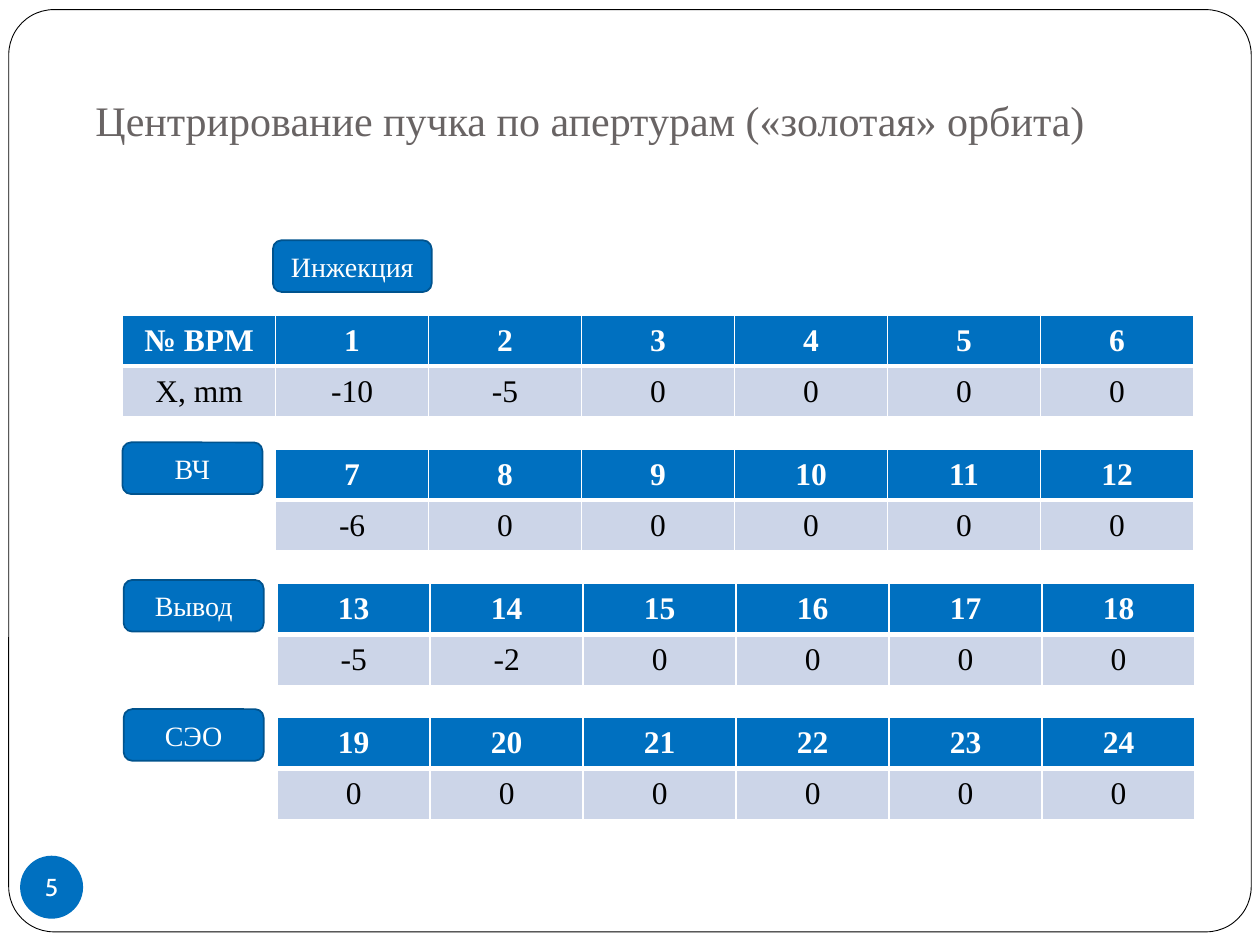
from lxml import etree
from pptx import Presentation
from pptx.dml.color import RGBColor
from pptx.enum.shapes import MSO_SHAPE as SHAPE
from pptx.enum.text import MSO_ANCHOR as ANCHOR, PP_ALIGN as ALIGN
from pptx.oxml.ns import qn
from pptx.util import Pt


def rgb(value):
    return RGBColor.from_string(value)


class SlideBuilder:
    SERIF, SANS = "Times New Roman", "Cabin"
    BLUE, DARK_BLUE, PALE = "0070C0", "00538E", "CCD5E8"
    GRAY, WHITE, BLACK = "696464", "FFFFFF", "000000"

    def __init__(self, s):
        self.s = s

    def set_text(self, tf, text, size, color, font=SERIF, bold=False, align=ALIGN.CENTER):
        tf.vertical_anchor = ANCHOR.MIDDLE
        p = tf.paragraphs[0]
        p.text = text
        p.alignment = align
        p.font.name, p.font.size, p.font.bold = font, Pt(size), bold
        p.font.color.rgb = rgb(color)

    def shape(self, kind, x, y, w, h, fill, line=None, weight=1):
        sp = self.s.shapes.add_shape(kind, Pt(x), Pt(y), Pt(w), Pt(h))
        sp.shadow.inherit = False
        sp.fill.solid()
        sp.fill.fore_color.rgb = rgb(fill)
        if line:
            sp.line.color.rgb = rgb(line)
            sp.line.width = Pt(weight)
        else:
            sp.line.fill.background()
        return sp

    def frame(self, x, y, w, h):
        sp = self.shape(SHAPE.ROUNDED_RECTANGLE, x, y, w, h, self.WHITE, self.BLACK, 0.5)
        sp.adjustments[0] = 0.049

    def title(self, text, x, y, w, h):
        tf = self.s.shapes.add_textbox(Pt(x), Pt(y), Pt(w), Pt(h)).text_frame
        tf.word_wrap = True
        tf.margin_bottom = Pt(7.2)
        self.set_text(tf, text, 24, self.GRAY, align=ALIGN.LEFT)

    def page_number(self, text, x, y, d):
        tf = self.shape(SHAPE.OVAL, x, y, d, d, self.BLUE).text_frame
        tf.margin_left = tf.margin_right = tf.margin_top = tf.margin_bottom = 0
        tf.word_wrap = False
        self.set_text(tf, text, 14, self.WHITE, self.SANS)

    def label(self, text, x, y, w):
        sp = self.shape(SHAPE.ROUNDED_RECTANGLE, x, y, w, 29.5, self.BLUE, self.DARK_BLUE)
        self.set_text(sp.text_frame, text, 16, self.WHITE)

    def borders(self, cell, bottom):
        tc_pr = cell._tc.get_or_add_tcPr()
        for i, (side, width) in enumerate(zip("LRTB", (1, 1, 1, bottom))):
            ln = etree.Element(qn(f"a:ln{side}"), w=str(Pt(width)))
            fill = etree.SubElement(ln, qn("a:solidFill"))
            etree.SubElement(fill, qn("a:srgbClr"), val=self.WHITE)
            tc_pr.insert(i, ln)

    def table(self, rows, x, y, col_w, row_h):
        n = len(rows[0])
        table = self.s.shapes.add_table(
            len(rows), n, Pt(x), Pt(y), Pt(col_w * n), Pt(row_h * len(rows))).table
        for col in table.columns:
            col.width = Pt(col_w)
        for r, values in enumerate(rows):
            head = r == 0
            for c, value in enumerate(values):
                cell = table.cell(r, c)
                cell.fill.solid()
                cell.fill.fore_color.rgb = rgb(self.BLUE if head else self.PALE)
                self.borders(cell, 3 if head else 1)
                cell.vertical_anchor = ANCHOR.MIDDLE
                self.set_text(cell.text_frame, str(value), 18,
                              self.WHITE if head else self.BLACK, bold=head)


def main():
    prs = Presentation()
    prs.slide_width, prs.slide_height = Pt(720), Pt(540)
    b = SlideBuilder(prs.slides.add_slide(prs.slide_layouts[6]))

    # Frame, title and page number
    b.frame(5, 5.5, 710, 527)
    b.title("Центрирование пучка по апертурам («золотая» орбита)", 47.5, 21.6, 636.5, 97.2)
    b.page_number("5", 11.5, 489, 36)

    # Beam position tables, six monitors each; the first has row headings
    col_w, per_table = 87.43, 6
    offsets = [
        (157.5, [-10, -5, 0, 0, 0, 0]),
        (157.5, [-6, 0, 0, 0, 0, 0]),
        (158.4, [-5, -2, 0, 0, 0, 0]),
        (158.4, [0] * per_table),
    ]
    for i, (x, values) in enumerate(offsets):
        first = i * per_table + 1
        rows = [list(range(first, first + per_table)), values]
        if i == 0:
            rows = [["№ BPM"] + rows[0], ["X, mm"] + rows[1]]
            x -= col_w
        b.table(rows, x, 180 + 76.6 * i, col_w, 29.2)

    # Section labels
    for text, x, y, w in [
        ("Инжекция", 156, 137.3, 90.7),
        ("ВЧ", 70, 252.8, 80),
        ("Вывод", 70.7, 331.4, 80),
        ("СЭО", 70.7, 405.2, 80),
    ]:
        b.label(text, x, y, w)

    prs.save("out.pptx")


if __name__ == "__main__":
    main()
